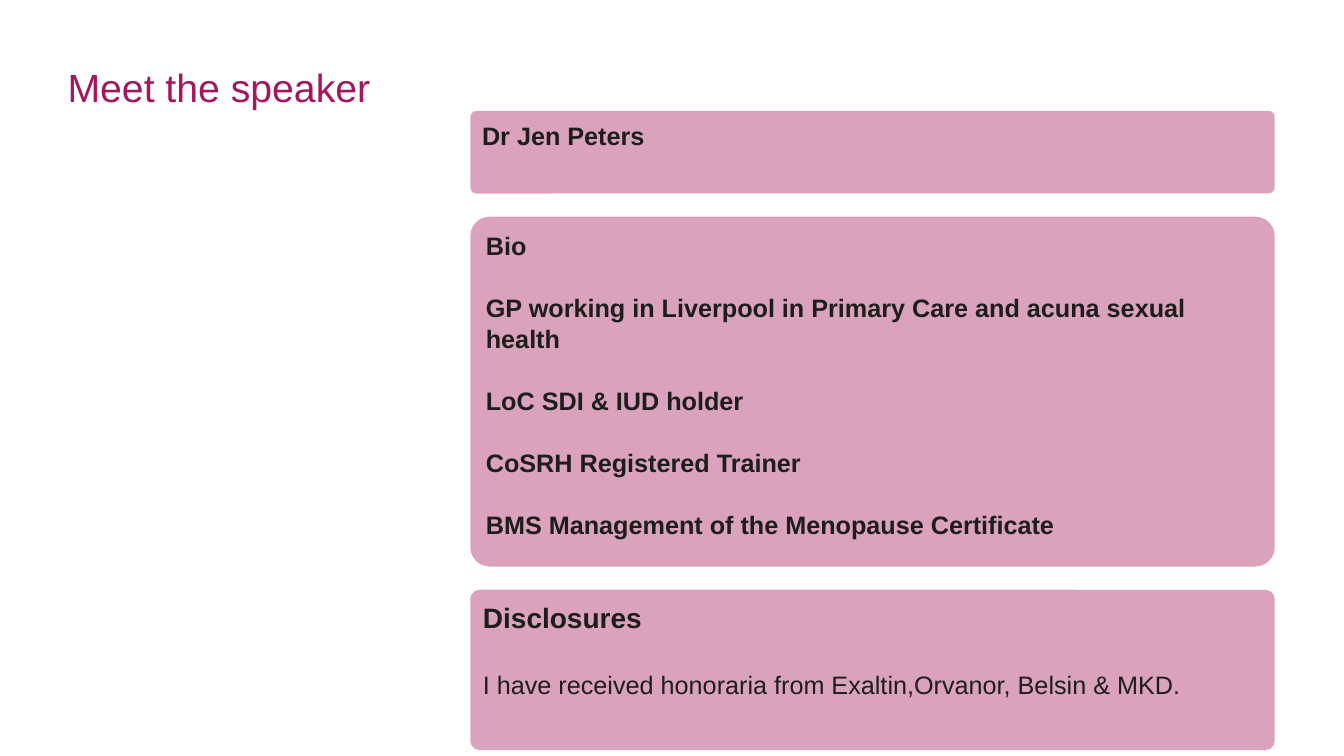
from dataclasses import dataclass

from lxml import etree
from pptx import Presentation
from pptx.dml.color import RGBColor
from pptx.enum.shapes import MSO_SHAPE as Shape
from pptx.enum.text import MSO_ANCHOR as Anchor, MSO_AUTO_SIZE as AutoSize, PP_ALIGN as Align
from pptx.oxml.ns import qn
from pptx.util import Inches, Pt

SLIDE_WIDTH, SLIDE_HEIGHT = Inches(13.33), Inches(7.5)


@dataclass(frozen=True)
class Theme:
    font: str = "Arial"
    title_color: RGBColor = RGBColor(0xA4, 0x16, 0x5D)
    card_color: RGBColor = RGBColor(0xA6, 0x17, 0x5D)
    text_color: RGBColor = RGBColor(0x1D, 0x1D, 0x1B)
    card_alpha: int = 40
    title_size: int = 28
    heading_size: int = 20
    body_size: int = 18
    line_spacing: float = 1.05


@dataclass(frozen=True)
class Box:
    """A region in percent of the slide's width and height."""
    left: float
    top: float
    width: float
    height: float

    def place(self):
        return (int(SLIDE_WIDTH * self.left / 100), int(SLIDE_HEIGHT * self.top / 100),
                int(SLIDE_WIDTH * self.width / 100), int(SLIDE_HEIGHT * self.height / 100))


@dataclass(frozen=True)
class Line:
    text: str
    size: int
    bold: bool = True


@dataclass(frozen=True)
class Card:
    height: float
    radius: float
    lines: tuple


THEME = Theme()
TITLE_BOX = Box(4.43, 7.87, 90.45, 5.33)
CARDS_BOX = Box(35, 14.67, 59.85, 84.53)
CARD_GAP = 3.07
CARDS = (
    Card(10.93, 0.06, (Line("Dr Jen Peters", THEME.body_size),)),
    Card(46.27, 0.19, tuple(Line(text, THEME.body_size) for text in (
        "Bio",
        "GP working in Liverpool in Primary Care and acuna sexual health",
        "LoC SDI & IUD holder",
        "CoSRH Registered Trainer",
        "BMS Management of the Menopause Certificate",
    ))),
    Card(21.2, 0.09, (
        Line("Disclosures", THEME.heading_size),
        Line("I have received honoraria from Exaltin,Orvanor, Belsin & MKD.",
             THEME.body_size, bold=False),
    )),
)


def set_frame(text_frame, side, top):
    text_frame.word_wrap = True
    text_frame.auto_size = AutoSize.NONE
    text_frame.vertical_anchor = Anchor.TOP
    text_frame.margin_left = text_frame.margin_right = Inches(side)
    text_frame.margin_top, text_frame.margin_bottom = Inches(top), 0


def format_paragraph(paragraph, size, color, bold, line_spacing, space_before=0):
    paragraph.alignment = Align.LEFT
    paragraph.line_spacing = line_spacing
    paragraph.space_before = Pt(space_before)
    for run in paragraph.runs:
        run.font.name = THEME.font
        run.font.size = Pt(size)
        run.font.bold = bold
        run.font.color.rgb = color


def add_title(slide, box):
    title = slide.shapes.title
    title.left, title.top, title.width, title.height = box.place()
    title.text_frame.text = "Meet the speaker"
    set_frame(title.text_frame, 0.08, 0.09)
    format_paragraph(title.text_frame.paragraphs[0], THEME.title_size,
                     THEME.title_color, False, 0.9)


def add_card(slide, box, card):
    shape = slide.shapes.add_shape(Shape.ROUNDED_RECTANGLE, *box.place())
    shape.adjustments[0] = Inches(card.radius) / min(shape.width, shape.height)
    shape.shadow.inherit = False
    shape.line.fill.background()
    shape.fill.solid()
    shape.fill.fore_color.rgb = THEME.card_color
    color = shape.fill._xPr.find(f".//{qn('a:srgbClr')}")
    etree.SubElement(color, qn("a:alpha"), val=str(THEME.card_alpha * 1000))

    text_frame = shape.text_frame
    set_frame(text_frame, 0.1, 0.06)
    text_frame.text = "\n".join(line.text for line in card.lines)
    space_before = 0
    for paragraph, line in zip(text_frame.paragraphs, card.lines):
        format_paragraph(paragraph, line.size, THEME.text_color, line.bold,
                         THEME.line_spacing, space_before)
        space_before = line.size * 1.2


def add_cards(slide, box):
    top = box.top
    for card in CARDS:
        add_card(slide, Box(box.left, top, box.width, card.height), card)
        top += card.height + CARD_GAP


def main():
    presentation = Presentation()
    presentation.slide_width, presentation.slide_height = SLIDE_WIDTH, SLIDE_HEIGHT
    slide = presentation.slides.add_slide(presentation.slide_layouts.get_by_name("Title Only"))
    add_title(slide, TITLE_BOX)
    add_cards(slide, CARDS_BOX)
    presentation.save("out.pptx")


if __name__ == "__main__":
    main()
